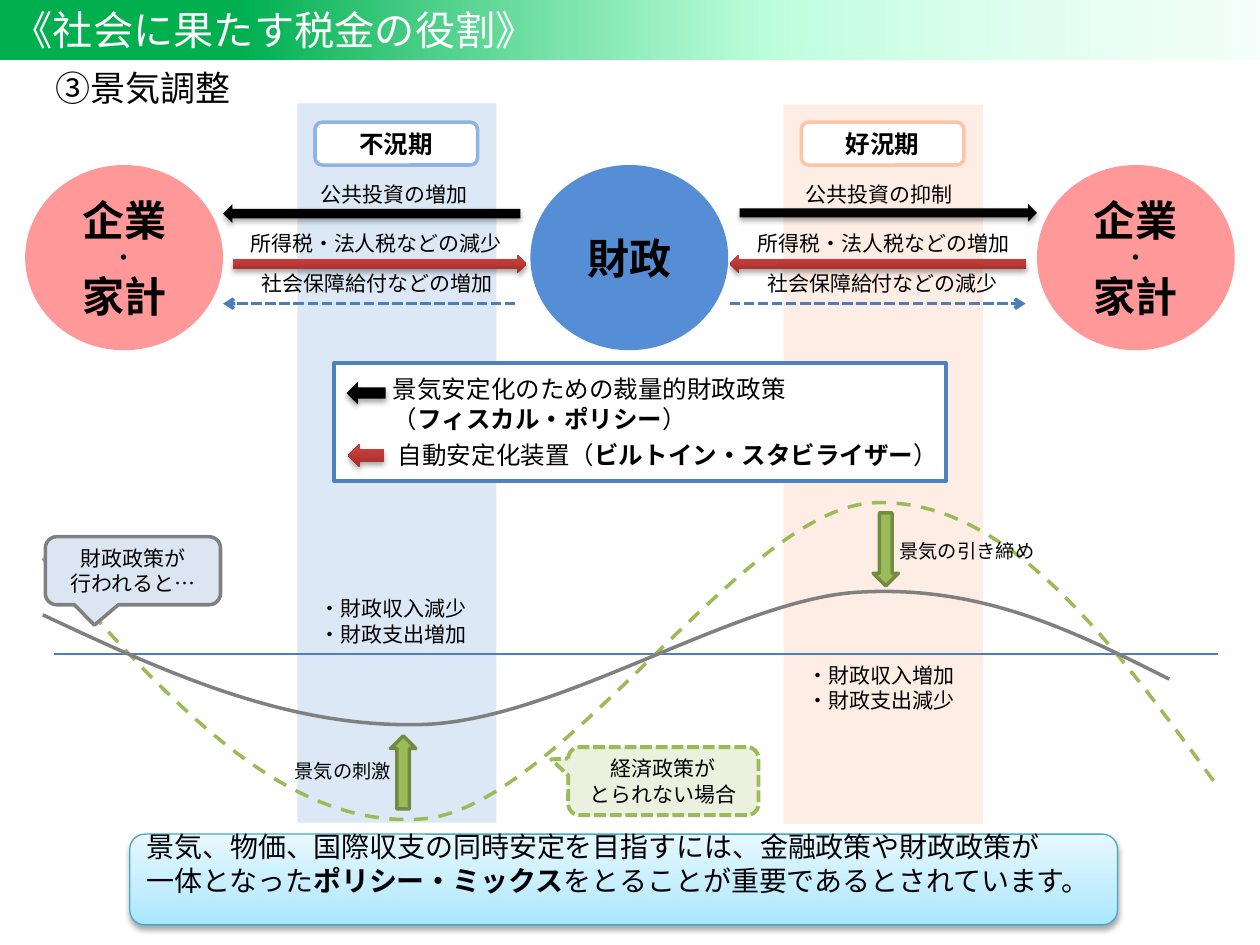
"""Builds the slide on how taxes smooth the business cycle."""
from dataclasses import dataclass

from lxml import etree
from pptx import Presentation
from pptx.dml.color import RGBColor
from pptx.enum.dml import MSO_LINE
from pptx.enum.shapes import MSO_CONNECTOR, MSO_SHAPE
from pptx.enum.text import MSO_ANCHOR, MSO_AUTO_SIZE, PP_ALIGN
from pptx.oxml.ns import qn
from pptx.util import Pt


@dataclass(frozen=True)
class Theme:
    font: str = "Noto Sans CJK JP"
    black: str = "000000"
    white: str = "FFFFFF"
    slump: str = "8EB4E3"
    boom: str = "FDC4A7"
    pink: str = "FF9999"
    blue: str = "558ED5"
    frame: str = "4F81BD"
    rule: str = "4B7EBC"
    green: str = "9BBB59"
    moss: str = "738A42"
    gray: str = "808080"
    ice: str = "DCE6F2"
    leaf: str = "EBF1DE"
    aqua: str = "46AAC5"
    red: tuple = ((0, "9C2F2D", 100), (80, "CB3E3A", 100), (100, "CE3B37", 100))
    sky: tuple = ((0, "A7E6FF", 100), (35, "C1EDFF", 100), (100, "E7F8FF", 100))
    banner: tuple = ((19, "00B050", 100), (61, "ABFFD3", 78), (100, "DBFFF0", 28))
    title: int = 23
    big: int = 24
    head: int = 20
    note: int = 16
    label: int = 14
    body: int = 12
    small: int = 11


T = Theme()
PX = 9144
L, C = PP_ALIGN.LEFT, PP_ALIGN.CENTER
M = MSO_SHAPE


def paint(sp, fill=None, line=None, width=2, dash=None, alpha=100, angle=90, shadow=False):
    pr = sp._element.spPr
    if fill is None:
        sp.fill.background()
    elif isinstance(fill, tuple):
        sp.fill.gradient()
        sp.fill.gradient_angle = angle
        stops = pr.find(qn("a:gradFill")).find(qn("a:gsLst"))
        for old in list(stops):
            stops.remove(old)
        for pos, color, opacity in fill:
            gs = etree.SubElement(stops, qn("a:gs"), pos=str(pos * 1000))
            clr = etree.SubElement(gs, qn("a:srgbClr"), val=color)
            etree.SubElement(clr, qn("a:alpha"), val=str(opacity * 1000))
    else:
        sp.fill.solid()
        sp.fill.fore_color.rgb = RGBColor.from_string(fill)
        if alpha < 100:
            clr = pr.find(qn("a:solidFill"))[0]
            etree.SubElement(clr, qn("a:alpha"), val=str(alpha * 1000))
    if line:
        sp.line.color.rgb = RGBColor.from_string(line)
        sp.line.width = Pt(width)
        if dash:
            sp.line.dash_style = dash
    else:
        sp.line.fill.background()
    sp.shadow.inherit = False
    if shadow:
        shd = etree.SubElement(pr.find(qn("a:effectLst")), qn("a:outerShdw"), blurRad="40000",
                               dist="23000", dir="5400000", rotWithShape="0")
        clr = etree.SubElement(shd, qn("a:srgbClr"), val=T.black)
        etree.SubElement(clr, qn("a:alpha"), val="35000")


def write(sp, text, size, align=C, bold=False, color=T.black, anchor=MSO_ANCHOR.MIDDLE):
    """Fills a shape with text; asterisks enclose bold words."""
    tf = sp.text_frame
    tf.word_wrap = True
    tf.auto_size = MSO_AUTO_SIZE.NONE
    tf.vertical_anchor = anchor
    tf.text = text
    for p in tf.paragraphs:
        p.alignment = align
        parts = p.text.split("*")
        p.text = parts[0]
        for part in parts[1:]:
            p.add_run().text = part
        for i, r in enumerate(p.runs):
            r.font.size = Pt(T.body if r.text == "・" else size)
            r.font.bold = bold or i % 2 == 1
            r.font.name = T.font
            r.font.color.rgb = RGBColor.from_string(color)
            etree.SubElement(r._r.get_or_add_rPr(), qn("a:ea"), typeface=T.font)


prs = Presentation()
prs.slide_width, prs.slide_height = 1000 * PX, 750 * PX
s = prs.slides.add_slide(prs.slide_layouts[5])
shapes = s.shapes

title = shapes.title
title.left, title.top, title.width, title.height = 0, 0, 1000 * PX, 47 * PX
paint(title, T.banner, angle=0)
write(title, "《社会に果たす税金の役割》", T.title, L, color=T.white)

for x, y, color, text in [(622, 83, T.boom, "好況期"), (236, 82, T.slump, "不況期")]:
    band = shapes.add_shape(M.RECTANGLE, x * PX, y * PX, 158 * PX, 571 * PX)
    paint(band, color, alpha=30)
    tag = shapes.add_shape(M.ROUNDED_RECTANGLE, (x + 14) * PX, 97 * PX, 129 * PX, 34 * PX)
    paint(tag, T.white, color)
    write(tag, text, T.label, bold=True)

legend = shapes.add_shape(M.RECTANGLE, 265 * PX, 288 * PX, 486 * PX, 94 * PX)
paint(legend, T.white, T.frame)

for kind, x, y, w, h, fill in [
    (M.LEFT_ARROW, 177, 162, 236, 15, T.black),
    (M.LEFT_ARROW, 579, 202, 235, 15, T.red),
    (M.RIGHT_ARROW, 185, 202, 233, 15, T.red),
    (M.RIGHT_ARROW, 587, 162, 236, 14, T.black),
    (M.LEFT_ARROW, 275, 303, 31, 18, T.black),
    (M.LEFT_ARROW, 276, 352, 29, 19, T.red),
]:
    arrow = shapes.add_shape(kind, x * PX, y * PX, w * PX, h * PX)
    paint(arrow, fill, shadow=True)

for x1, x2, y, width, dash in [
    (43, 967, 519, 0.75, None),
    (409, 177, 241, 2, MSO_LINE.SQUARE_DOT),
    (579, 814, 241, 2, MSO_LINE.SQUARE_DOT),
]:
    cn = shapes.add_connector(MSO_CONNECTOR.STRAIGHT, x1 * PX, y * PX, x2 * PX, y * PX)
    cn.line.color.rgb = RGBColor.from_string(T.rule)
    cn.line.width = Pt(width)
    if dash:
        cn.line.dash_style = dash
        etree.SubElement(cn.line._get_or_add_ln(), qn("a:tailEnd"), type="arrow")
    etree.SubElement(cn._element.spPr, qn("a:effectLst"))

for color, dash, knots in [
    (T.green, MSO_LINE.DASH, [(34, 443), (128, 550), (223, 658), (334, 650), (444, 643),
                              (589, 403), (694, 399), (800, 395), (883, 510), (967, 625)]),
    (T.gray, None, [(34, 488), (130, 533), (227, 578), (335, 575), (443, 572),
                    (582, 476), (681, 470), (780, 464), (854, 502), (928, 539)]),
]:
    fb = shapes.build_freeform(*knots[0], scale=PX)
    fb.add_line_segments(knots[3::3], close=False)
    wave = fb.convert_to_shape()
    top = min(y for x, y in knots[::3])
    for i, seg in enumerate(list(wave._element.spPr.iter(qn("a:lnTo")))):
        seg.tag = qn("a:cubicBezTo")
        seg.remove(seg[0])
        for x, y in knots[3 * i + 1:3 * i + 4]:
            etree.SubElement(seg, qn("a:pt"), x=str(x - knots[0][0]), y=str(y - top))
    paint(wave, None, color, dash=dash)

for kind, x, y in [(M.DOWN_ARROW, 693, 407), (M.UP_ARROW, 310, 584)]:
    paint(shapes.add_shape(kind, x * PX, y * PX, 20 * PX, 58 * PX), T.green, T.moss)

for x, fill, text in [(20, T.pink, "企業\n・\n家計"), (823, T.pink, "企業\n・\n家計"),
                      (421, T.blue, "財政")]:
    circle = shapes.add_shape(M.OVAL, x * PX, 131 * PX, 157 * PX, 147 * PX)
    paint(circle, fill)
    write(circle, text, T.big, bold=True)

for x, y, w, h, tip, look, text, size, align in [
    (36, 426, 139, 54, (-0.22, 0.8), dict(fill=T.ice, line=T.gray),
     "財政政策が\n行われると…", T.body, C),
    (451, 593, 151, 54, (-0.59, -0.32),
     dict(fill=T.leaf, line=T.green, width=2.25, dash=MSO_LINE.SQUARE_DOT),
     "経済政策が\nとられない場合", T.body, C),
    (103, 662, 784, 72, (0.5, 0.31), dict(fill=T.sky, line=T.aqua, width=0.75, shadow=True),
     "景気、物価、国際収支の同時安定を目指すには、金融政策や財政政策が\n"
     "一体となった*ポリシー・ミックス*をとることが重要であるとされています。", T.note, L),
]:
    callout = shapes.add_shape(M.ROUNDED_RECTANGULAR_CALLOUT, x * PX, y * PX, w * PX, h * PX)
    callout.adjustments[0], callout.adjustments[1] = tip
    paint(callout, **look)
    write(callout, text, size, align, anchor=MSO_ANCHOR.TOP if align == L else MSO_ANCHOR.MIDDLE)
    if align == L:
        callout.text_frame.margin_top = -7 * PX

for x, y, w, h, size, align, text in [
    (34, 48, 228, 44, T.head, L, "③景気調整"),
    (206, 139, 213, 30, T.body, C, "公共投資の増加"),
    (178, 178, 241, 30, T.body, C, "所得税・法人税などの減少"),
    (193, 210, 213, 30, T.body, C, "社会保障給付などの増加"),
    (591, 139, 213, 30, T.body, C, "公共投資の抑制"),
    (587, 178, 228, 30, T.body, C, "所得税・法人税などの増加"),
    (594, 210, 213, 30, T.body, C, "社会保障給付などの減少"),
    (302, 292, 386, 57, T.label, L, "景気安定化のための裁量的財政政策\n（*フィスカル・ポリシー*）"),
    (306, 344, 450, 34, T.label, L, "自動安定化装置（*ビルトイン・スタビライザー*）"),
    (244, 468, 192, 50, T.body, L, "・財政収入減少\n・財政支出増加"),
    (631, 521, 177, 50, T.body, L, "・財政収入増加\n・財政支出減少"),
    (704, 423, 148, 29, T.small, L, "景気の引き締め"),
    (224, 598, 126, 29, T.small, L, "景気の刺激"),
]:
    tb = shapes.add_textbox(x * PX, y * PX, w * PX, h * PX)
    write(tb, text, size, align, anchor=MSO_ANCHOR.TOP)

prs.save("out.pptx")
